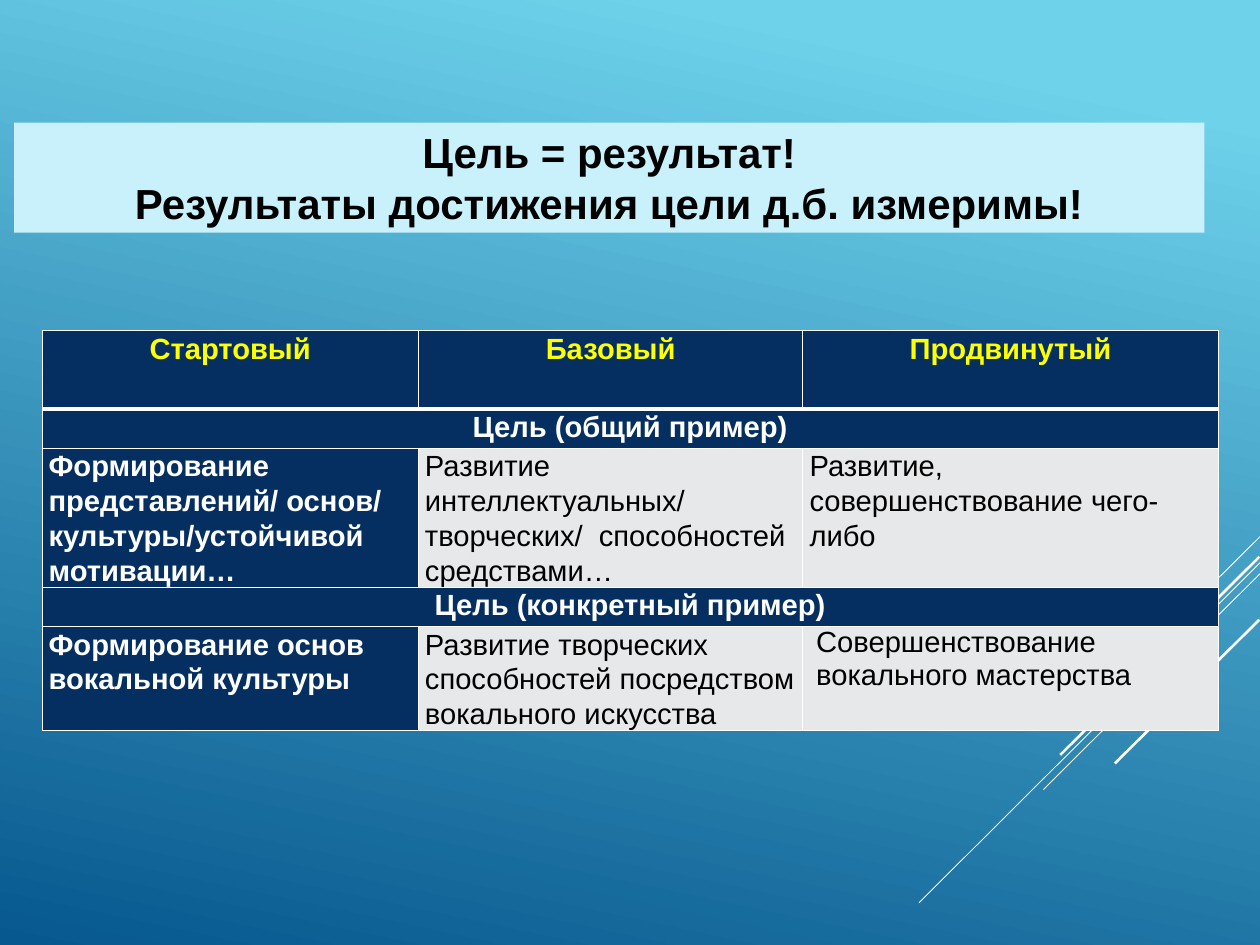
from dataclasses import dataclass
from lxml.etree import SubElement
from pptx import Presentation
from pptx.dml.color import RGBColor
from pptx.enum.shapes import MSO_CONNECTOR, MSO_SHAPE
from pptx.enum.text import MSO_ANCHOR, PP_ALIGN
from pptx.oxml import parse_xml
from pptx.oxml.ns import nsdecls, qn
from pptx.util import Cm, Pt


@dataclass(frozen=True)
class Theme:
    font: str = "Arial"
    sky: str = "6ED2EB"
    deep: str = "06588E"
    banner: str = "C8F1FB"
    navy: str = "052F61"
    pale: str = "E7E8EA"
    yellow: str = "FFFF00"
    white: str = "FFFFFF"
    black: str = "000000"
    title_size: float = 36
    cell_size: float = 25


T = Theme()
COLUMNS = (11.38, 11.63, 12.55)
ROWS = (
    (2.36, ("Стартовый", "Базовый", "Продвинутый")),
    (1.19, ("Цель (общий пример)",)),
    (4.09, ("Формирование представлений/ основ/ культуры/устойчивой мотивации…",
            "Развитие интеллектуальных/  творческих/  способностей  средствами…",
            "Развитие, совершенствование чего-либо")),
    (1.19, ("Цель (конкретный пример)",)),
    (3.05, ("Формирование основ вокальной культуры",
            "Развитие творческих способностей посредством вокального искусства",
            "Совершенствование вокального мастерства")),
)
RAYS = (
    (10.31, 0, 7.14, 3.15, 0.75),
    (10.31, 0.79, 0, 11.07, 0.75),
    (10.31, 1.12, 3.76, 7.65, 0.75),
    (10.29, 0.61, 4.27, 6.6, 2.25),
    (10.29, 2.51, 5.92, 6.86, 2.25),
)


def rgb(value):
    return RGBColor.from_string(value)


def apply(target, formats):
    for name, value in formats.items():
        setattr(target, name, value)


def write(p, text, size, color, bold, **paragraph):
    apply(p, paragraph)
    r = p.add_run()
    r.text = text
    apply(r.font, {"name": T.font, "size": Pt(size), "bold": bold})
    r.font.color.rgb = rgb(color)


def paint_background(s):
    fill = s.background.fill
    fill.gradient()
    fill.gradient_angle = 258
    for stop, position, color in zip(fill.gradient_stops, (0.1, 1), (T.sky, T.deep)):
        stop.position = position
        stop.color.rgb = rgb(color)


def add_rays(s, left, top):
    for x1, y1, x2, y2, width in RAYS:
        ray = s.shapes.add_connector(
            MSO_CONNECTOR.STRAIGHT,
            Cm(left + x1), Cm(top + y1), Cm(left + x2), Cm(top + y2))
        ray.line.color.rgb = rgb(T.white)
        ray.line.width = Pt(width)
        SubElement(ray._element.spPr, qn("a:effectLst"))


def add_banner(s, left, top, width, height, lines):
    sp = s.shapes.add_shape(
        MSO_SHAPE.RECTANGLE, Cm(left), Cm(top), Cm(width), Cm(height))
    sp.shadow.inherit = False
    sp.fill.solid()
    sp.fill.fore_color.rgb = rgb(T.banner)
    sp.line.fill.background()
    tf = sp.text_frame
    apply(tf, {"word_wrap": True, "vertical_anchor": MSO_ANCHOR.TOP})
    for i, line in enumerate(lines):
        p = tf.add_paragraph() if i else tf.paragraphs[0]
        write(p, line, T.title_size, T.black, True, alignment=PP_ALIGN.CENTER)


def set_borders(cell, top, bottom):
    tc_pr = cell._tc.get_or_add_tcPr()
    for i, (side, width) in enumerate(zip("LRTB", (1, 1, top, bottom))):
        tc_pr.insert(i, parse_xml(
            f'<a:ln{side} {nsdecls("a")} w="{Pt(width)}"><a:solidFill>'
            f'<a:srgbClr val="{T.white}"/></a:solidFill></a:ln{side}>'))


def add_goals_table(s, left, top):
    table = s.shapes.add_table(
        len(ROWS), len(COLUMNS), Cm(left), Cm(top),
        Cm(sum(COLUMNS)), Cm(sum(height for height, _ in ROWS))).table
    for column, width in zip(table.columns, COLUMNS):
        column.width = Cm(width)
    for i, (height, texts) in enumerate(ROWS):
        table.rows[i].height = Cm(height)
        header, band = i == 0, len(texts) == 1
        if band:
            table.cell(i, 0).merge(table.cell(i, len(COLUMNS) - 1))
        for j in range(len(COLUMNS)):
            cell = table.cell(i, j)
            dark = header or band or j == 0
            apply(cell, {"margin_left": Cm(0.2), "margin_right": Cm(0.2),
                         "margin_top": 0, "margin_bottom": 0})
            cell.fill.solid()
            cell.fill.fore_color.rgb = rgb(T.navy if dark else T.pale)
            set_borders(cell, 3 if i == 1 else 1, 3 if header else 1)
            if j < len(texts):
                color = T.yellow if header else T.white if dark else T.black
                align = PP_ALIGN.CENTER if header or band else PP_ALIGN.LEFT
                write(cell.text_frame.paragraphs[0], texts[j], T.cell_size, color,
                      dark, alignment=align, line_spacing=1.07, space_after=Pt(8))
    p = table.cell(len(ROWS) - 1, len(COLUMNS) - 1).text_frame.paragraphs[0]
    apply(p, {"line_spacing": None, "space_after": None})
    p._p.get_or_add_pPr().set("marL", str(Cm(0.2)))


def main():
    prs = Presentation()
    apply(prs, {"slide_width": Cm(38.1), "slide_height": Cm(28.58)})
    s = prs.slides.add_slide(prs.slide_layouts[6])
    paint_background(s)
    add_rays(s, 27.79, 16.23)
    add_banner(s, 0.43, 3.71, 35.99, 3.33,
               ("Цель = результат!", "Результаты достижения цели д.б. измеримы!"))
    add_goals_table(s, 1.27, 10.01)
    prs.save("out.pptx")


if __name__ == "__main__":
    main()
